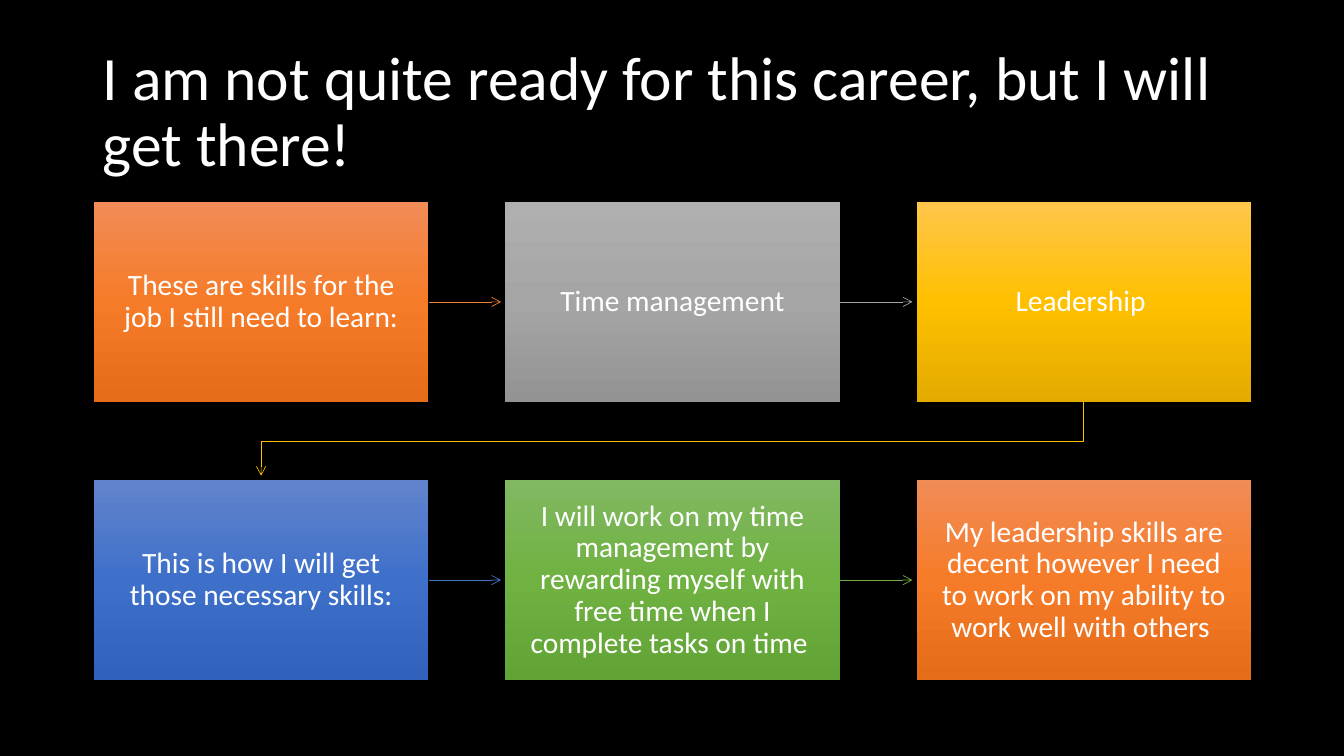
from copy import deepcopy

from lxml import etree
from pptx import Presentation
from pptx.dml.color import RGBColor
from pptx.enum.shapes import MSO_CONNECTOR, MSO_SHAPE
from pptx.enum.text import MSO_ANCHOR, PP_ALIGN
from pptx.oxml.ns import qn
from pptx.util import Inches, Pt

RECT = MSO_SHAPE.RECTANGLE
STRAIGHT = MSO_CONNECTOR.STRAIGHT
MIDDLE = MSO_ANCHOR.MIDDLE
LEFT, CENTER = PP_ALIGN.LEFT, PP_ALIGN.CENTER

FONT = "Calibri"
BLACK = RGBColor(0x00, 0x00, 0x00)
WHITE = RGBColor(0xFF, 0xFF, 0xFF)

# Each palette holds the arrow colour, then the gradient from top to bottom.
ORANGE = (RGBColor(0xED, 0x7D, 0x31), RGBColor(0xF1, 0x8C, 0x57),
          RGBColor(0xF6, 0x7B, 0x28), RGBColor(0xE5, 0x6C, 0x19))
GRAY = (RGBColor(0xA5, 0xA5, 0xA5), RGBColor(0xAF, 0xAF, 0xAF),
        RGBColor(0xA5, 0xA5, 0xA5), RGBColor(0x93, 0x93, 0x93))
GOLD = (RGBColor(0xFF, 0xC0, 0x00), RGBColor(0xFF, 0xC6, 0x4B),
        RGBColor(0xFF, 0xC0, 0x00), RGBColor(0xE3, 0xAB, 0x00))
BLUE = (RGBColor(0x44, 0x72, 0xC4), RGBColor(0x61, 0x83, 0xCB),
        RGBColor(0x3E, 0x70, 0xCA), RGBColor(0x30, 0x62, 0xBB))
GREEN = (RGBColor(0x70, 0xAD, 0x47), RGBColor(0x81, 0xB8, 0x61),
         RGBColor(0x6F, 0xB2, 0x42), RGBColor(0x62, 0xA3, 0x36))

TITLE = "I am not quite ready for this career, but I will get there!"
STEPS = [
    ("These are skills for the job I still need to learn:", ORANGE),
    ("Time management", GRAY),
    ("Leadership ", GOLD),
    ("This is how I will get those necessary skills:", BLUE),
    ("I will work on my time management by rewarding myself with free time "
     "when I complete tasks on time ", GREEN),
    ("My leadership skills are decent however I need to work on my ability "
     "to work well with others ", ORANGE),
]
COLS = 3
STEP_W, STEP_H = 3.32, 1.99
PITCH_X, PITCH_Y = 4.08, 2.76
TIP_GAP = 0.04


def write(shape, text, size, align):
    """Set one white paragraph, vertically centred, in a shape."""
    tf = shape.text_frame
    tf.word_wrap = True
    tf.vertical_anchor = MIDDLE
    p = tf.paragraphs[0]
    p.text = text
    p.alignment = align
    p.line_spacing = 0.9
    font = p.runs[0].font
    font.name, font.size, font.color.rgb = FONT, Pt(size), WHITE
    return tf


def add_title(s, x, y, w, h):
    """Place the slide title in the given box."""
    box = s.shapes.add_textbox(Inches(x), Inches(y), Inches(w), Inches(h))
    write(box, TITLE, 44, LEFT)


def fill_gradient(shape, colors):
    """Fill a shape from top to bottom with three evenly spaced colours."""
    fill = shape.fill
    fill.gradient()
    fill.gradient_angle = 270
    first = shape._element.spPr.find(".//" + qn("a:gs"))
    first.addnext(deepcopy(first))
    for i, (stop, color) in enumerate(zip(fill.gradient_stops, colors)):
        stop.position = i / 2
        stop.color.rgb = color


def add_step(s, x, y, text, palette):
    """Place one gradient step box with its text."""
    sp = s.shapes.add_shape(RECT, Inches(x), Inches(y), Inches(STEP_W), Inches(STEP_H))
    sp.shadow.inherit = False
    sp.line.fill.background()
    fill_gradient(sp, palette[1:])
    tf = write(sp, text, 21, CENTER)
    tf.margin_left = tf.margin_right = Inches(0.16)
    tf.margin_top = tf.margin_bottom = Inches(0.17)


def style_arrow(line_shape, color):
    """Give a line its colour, width and open arrowhead."""
    line_shape.line.color.rgb = color
    line_shape.line.width = Pt(0.5)
    spPr = line_shape._element.spPr
    etree.SubElement(spPr.find(qn("a:ln")), qn("a:tailEnd"), type="arrow")
    if spPr.find(qn("a:effectLst")) is None:
        etree.SubElement(spPr, qn("a:effectLst"))


def add_next_arrow(s, x, y, color):
    """Link a step to the one on its right."""
    start, end = x + STEP_W, x + PITCH_X - TIP_GAP
    mid = Inches(y + STEP_H / 2)
    style_arrow(s.shapes.add_connector(STRAIGHT, Inches(start), mid, Inches(end), mid), color)


def add_wrap_arrow(s, x, y, color):
    """Link the last step of a row to the first step of the next row."""
    start = x + STEP_W / 2
    end = start - (COLS - 1) * PITCH_X
    top, tip = y + STEP_H, y + PITCH_Y - TIP_GAP
    turn = y + (STEP_H + PITCH_Y) / 2
    points = [(start, top), (start, turn), (end, turn), (end, tip)]
    points = [(Inches(px), Inches(py)) for px, py in points]
    path = s.shapes.build_freeform(*points[0])
    path.add_line_segments(points[1:], close=False)
    elbow = path.convert_to_shape()
    elbow.fill.background()
    elbow.shadow.inherit = False
    style_arrow(elbow, color)


def add_process(s, x, y):
    """Lay the steps out in rows and link each to the next."""
    for i, (text, palette) in enumerate(STEPS):
        row, col = divmod(i, COLS)
        left, top = x + col * PITCH_X, y + row * PITCH_Y
        if col < COLS - 1:
            add_next_arrow(s, left, top, palette[0])
        elif i < len(STEPS) - 1:
            add_wrap_arrow(s, left, top, palette[0])
        add_step(s, left, top, text, palette)


def main():
    """Build and save the slide."""
    prs = Presentation()
    prs.slide_width, prs.slide_height = Inches(13.33), Inches(7.5)
    s = prs.slides.add_slide(prs.slide_layouts[6])
    s.background.fill.solid()
    s.background.fill.fore_color.rgb = BLACK
    add_title(s, 0.92, 0.4, 11.5, 1.45)
    add_process(s, 0.93, 2)
    prs.save("out.pptx")


if __name__ == "__main__":
    main()
